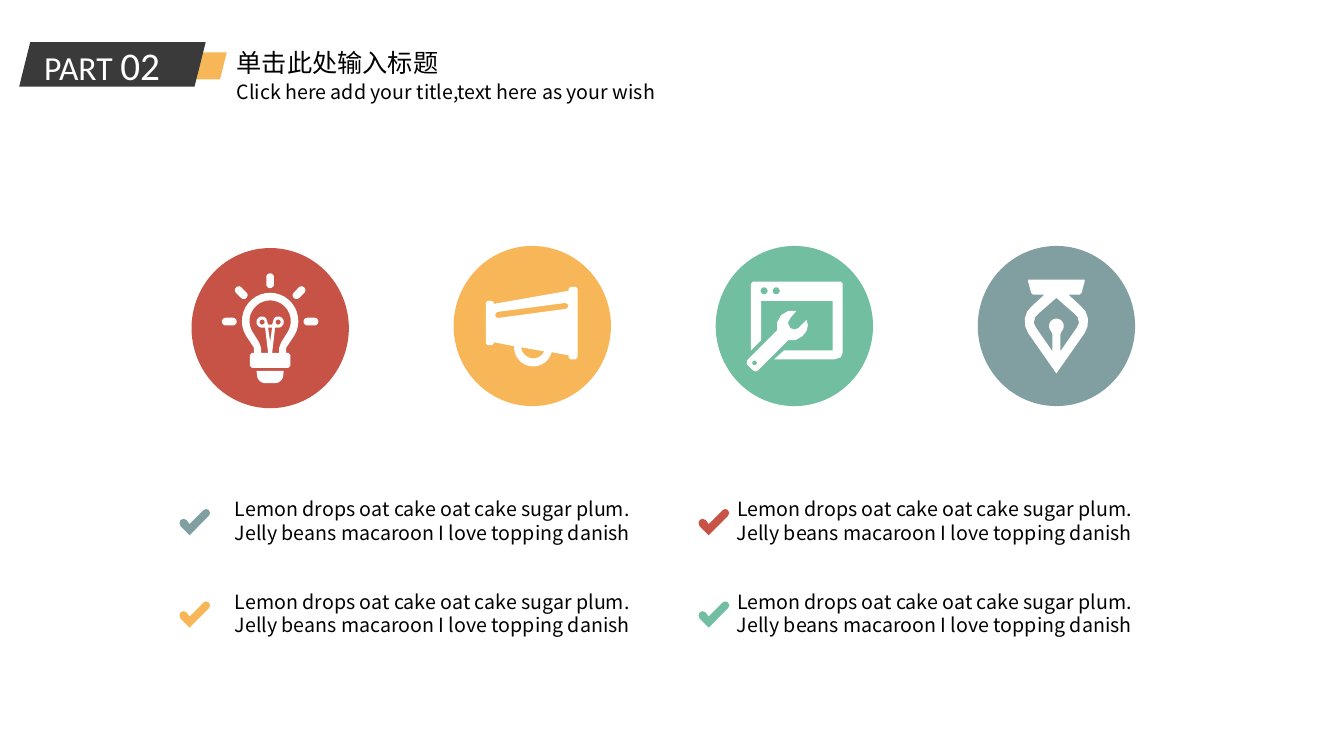
import math
from dataclasses import dataclass

from pptx import Presentation, util as u
from pptx.dml.color import RGBColor
from pptx.enum import shapes, text


@dataclass(frozen=True)
class Theme:
    red: str = "C75346"
    amber: str = "F7B759"
    green: str = "71BEA0"
    slate: str = "819FA1"
    dark: str = "3A3A3A"
    white: str = "FFFFFF"
    black: str = "000000"
    latin: str = "Calibri"
    cjk: str = "Noto Sans CJK SC"
    body_size: float = 14
    title_size: float = 18
    tag_size: float = 24
    number_size: float = 28


T = Theme()
GRID = 0.72  # points per icon grid step

prs = Presentation()
prs.slide_width, prs.slide_height = u.Pt(960), u.Pt(540)
s = prs.slides.add_slide(prs.slide_layouts[6])


def arc(cx, cy, radius, start, end):
    """Points along an arc, angles in degrees, clockwise from the right."""
    steps = max(4, round(abs(end - start) / 10))
    angles = [math.radians(start + (end - start) * i / steps) for i in range(steps + 1)]
    return [(cx + radius * math.cos(a), cy + radius * math.sin(a)) for a in angles]


def draw(x, y, colour, contours, halves=()):
    """One filled outline; halves are right sides, mirrored about x = 0."""
    mirrored = [h + [(-px, py) for px, py in reversed(h)] for h in halves]
    fb = None
    for contour in mirrored + contours:
        pts = [(px * 10, py * 10) for px, py in contour]
        if fb is None:
            fb = s.shapes.build_freeform(*pts[0], scale=u.Pt(GRID) / 10)
        else:
            fb.move_to(*pts[0])
        fb.add_line_segments(pts[1:], close=True)
    sp = fb.convert_to_shape(u.Pt(x), u.Pt(y))
    sp.shadow.inherit = False
    sp.fill.solid()
    sp.fill.fore_color.rgb = RGBColor.from_string(colour)
    sp.line.fill.background()


# Header tags and icon discs
DISC_W, DISC_H, DISC_STEP = 112.4, 114.4, 187.2
disc_x = [193 + i * DISC_STEP for i in range(4)]
disc_y = [234.4, 232.9, 232.9, 232.9]
PARA, OVAL = shapes.MSO_SHAPE.PARALLELOGRAM, shapes.MSO_SHAPE.OVAL
presets = [
    (PARA, 123.1, 37.4, 38.9, 19.4, T.amber),
    (PARA, 13.7, 30.2, 133.2, 31.7, T.dark),
]
for cx, cy, colour in zip(disc_x, disc_y, (T.red, T.amber, T.green, T.slate)):
    presets.append((OVAL, cx - DISC_W / 2, cy - DISC_H / 2, DISC_W, DISC_H, colour))
for kind, x, y, w, h, colour in presets:
    sp = s.shapes.add_shape(kind, u.Pt(x), u.Pt(y), u.Pt(w), u.Pt(h))
    sp.shadow.inherit = False
    sp.fill.solid()
    sp.fill.fore_color.rgb = RGBColor.from_string(colour)
    sp.line.fill.background()

# Light bulb: rays, base, filament loops and wedge, then glass
rays = []
for angle in range(180, 361, 45):
    dx, dy = math.cos(math.radians(angle)), math.sin(math.radians(angle))
    rays.append(arc(44 * dx, -6.5 + 44 * dy, 3.8, angle - 90, angle + 90)
                + arc(37 * dx, -6.5 + 37 * dy, 3.8, angle + 90, angle + 270))
loops = [arc(x, -6, 2.5, 0, 350) for x in (-8, 8)]
wedge = [(0, 13.5), (-2, -0.5), (2, -0.5)]
base = [(0, 42.5), (13.5, 42.5)] + arc(5, 46.5, 8, 0, 90)
glass = arc(0, -7, 28, -90, 31) + [
    (16, 19.5), (16, 24.5), (18, 24.5), (20, 26.5), (20, 37.5), (18, 39.5)]
inside = arc(0, -7, 20.5, -90, 32) + [
    (11, 14), (9, 19.5), (9, 24.5), (2, 24.5), (5, -0.5),
] + arc(8, -6, 5.5, 90, -140) + [(2, -3.5)]
draw(disc_x[0], disc_y[0], T.white, rays + loops + [wedge], [base, glass, inside])

# Megaphone: body with handle, handle opening, slot
horn = [(43, -39), (45, -37), (45, 31), (43, 33), (38, 33), (36, 31), (36, 29)]
horn += arc(1, 21, 19, 15, 183) + [
    (-38, 16), (-38, 17), (-40, 19), (-44, 19), (-46, 17), (-46, -23), (-44, -25),
    (-40, -25), (-38, -23), (-38, -22), (36, -35), (36, -37), (38, -39)]
handle = arc(1, 20, 12, 25, 175)
slot = [(33, -17), (-34, -8), (-36, -9), (-37, -11), (-35, -14),
        (33, -23), (36, -21), (35, -18)]
draw(disc_x[1], disc_y[1], T.white, [horn, handle, slot])

# Browser window and wrench
frame = [(-43, -42), (-41, -44), (46, -44), (48, -42), (48, 26), (46, 31), (40, 33),
         (-20, 33), (-10, 24), (38, 24), (38, -25), (-33, -25), (-33, 14), (-43, 24)]
wrench = [(8, 10), (12, 5), (13.5, -1), (12, -6), (4, 2), (0, 3.5), (-4, 2),
          (-6.5, -3), (-4, -8), (2, -15), (-6, -15), (-13, -11), (-17, -4), (-17, 4),
          (-47, 34), (-47, 38), (-41, 44), (-38, 45), (-36, 44), (-6, 14), (1, 14)]
dots = [arc(x, y, r, 0, 350) for x, y, r in
        ((-30, -35, 3.5), (-18, -35, 3.5), (-39.5, 36.5, 2.3))]
draw(disc_x[2], disc_y[2], T.white, [frame, wrench] + dots)

# Pen nib
nib = [(0, -46), (28, -46), (28, -44), (25, -33), (23, -31), (12, -31), (24, -20),
       (29, -14.5), (31.3, -7.5), (31, 0), (28, 7), (0, 47)]
slit = [(0, -28), (17, -13), (21, -9), (22.5, -3), (20, 2), (4, 25), (4, 8)]
slit += arc(0, 0, 7.3, 45, -90)
draw(disc_x[3], disc_y[3], T.white, [], [nib, slit])

# Check marks
tick = [(29, 1), (26.5, 0), (24, 1), (10, 15), (7, 11), (4, 9.7), (1, 11), (0, 14),
        (1, 17), (10, 26), (29, 7), (30.5, 4)]
ticks = [(128.2, 363.6, T.slate), (128.2, 429.6, T.amber),
         (499, 363.6, T.red), (499, 429.6, T.green)]
for x, y, colour in ticks:
    draw(x, y, colour, [tick])

# Header texts and the four body texts
LEMON = "Lemon drops oat cake oat cake sugar plum. Jelly beans macaroon I love topping danish"
boxes = [
    (162, 53.3, 361.4, 24.5, ["Click here add your title,text here as your wish"],
     T.body_size, T.cjk, T.black),
    (162, 30.2, 228.2, 28.8, ["单击此处输入标题"], T.title_size, T.cjk, T.black),
    (24.5, 25.9, 110.9, 41, ["PART ", "02"], T.tag_size, T.latin, T.white),
]
boxes += [(x, y, 293.8, 36, [LEMON], T.body_size, T.cjk, T.black)
          for x in (162, 520.6) for y in (355, 421.2)]
for x, y, w, h, runs, size, font, colour in boxes:
    tf = s.shapes.add_textbox(u.Pt(x), u.Pt(y), u.Pt(w), u.Pt(h)).text_frame
    tf.word_wrap = True
    p = tf.paragraphs[0]
    p.font.name, p.font.size = font, u.Pt(size)
    p.font.color.rgb = RGBColor.from_string(colour)
    for words in runs:
        r = p.add_run()
        r.text = words
    if len(runs) > 1:
        r.font.size = u.Pt(T.number_size)
    if runs == [LEMON]:
        tf.margin_left = tf.margin_top = tf.margin_right = tf.margin_bottom = 0
        p.alignment = text.PP_ALIGN.CENTER
        p.space_before, p.line_spacing = u.Pt(7.5), u.Pt(16.8)
    else:
        tf.auto_size = text.MSO_AUTO_SIZE.SHAPE_TO_FIT_TEXT

prs.save("out.pptx")
